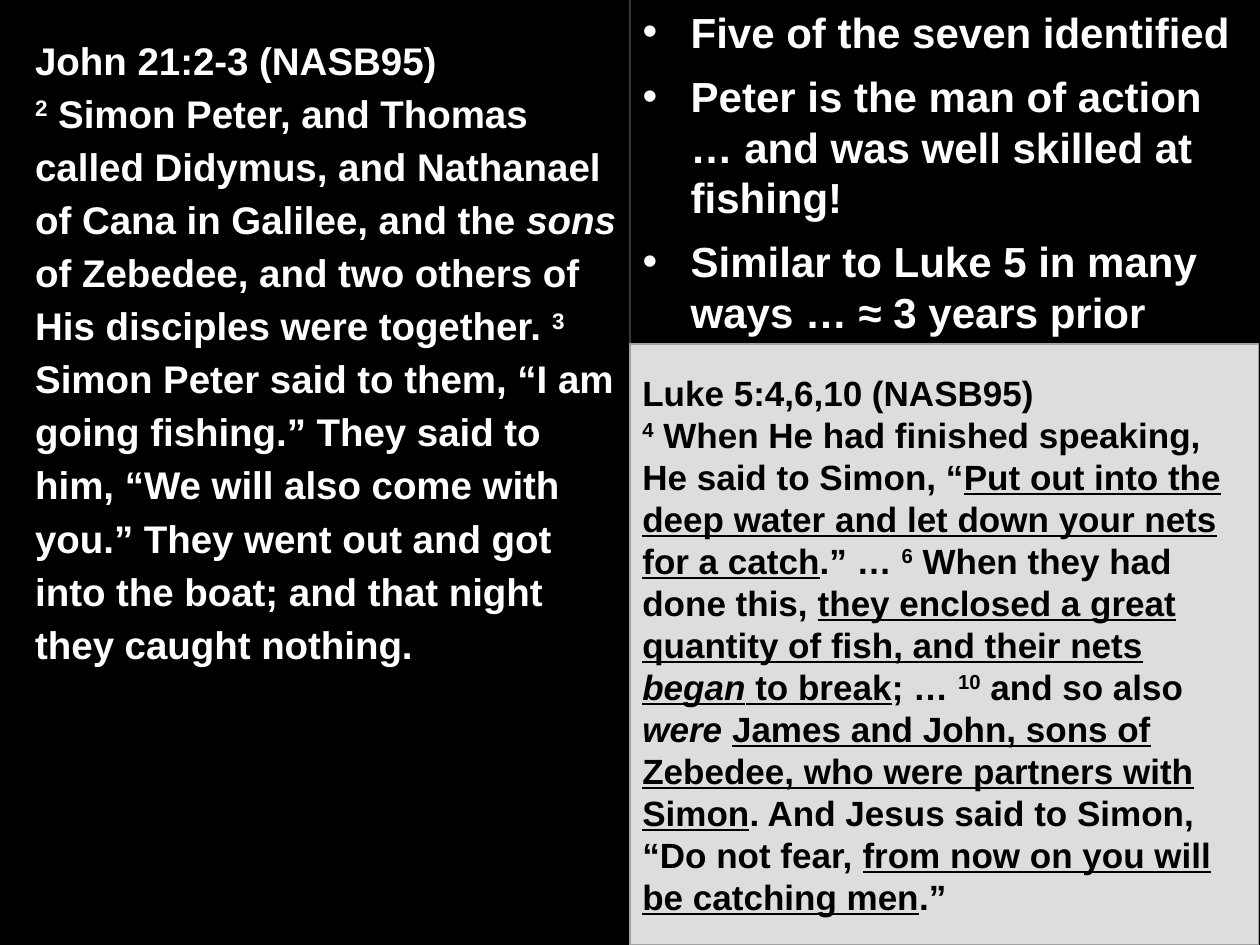
import pptx
import pptx.util
import pptx.dml.color
import pptx.enum.shapes
import pptx.enum.text
import pptx.oxml.ns
from dataclasses import dataclass
from lxml import etree
from pptx.util import Cm, Pt


@dataclass(frozen=True)
class Theme:
    font: str = "Arial"
    dark: str = "000000"
    light: str = "FFFFFF"
    panel: str = "DDDDDD"
    panel_edge: str = "A3A3A3"
    passage_size: int = 22
    bullet_size: int = 24
    reference_size: int = 20


THEME = Theme()
WIDTH, HEIGHT = Cm(25.4), Cm(19.05)
MIDDLE = Cm(12.7)
PANEL_TOP = Cm(6.93)

# Each run is (text, style): s = superscript, i = italic, u = underlined.
JOHN = [
    ("John 21:2-3 (NASB95)\v", ""),
    ("2", "s"),
    (" Simon Peter, and Thomas called Didymus, and Nathanael of Cana in Galilee, and the ", ""),
    ("sons", "i"),
    (" of Zebedee, and two others of His disciples were together. ", ""),
    ("3", "s"),
    (" Simon Peter said to them, “I am going fishing.” They said to him, “We will also come "
     "with you.” They went out and got into the boat; and that night they caught nothing.", ""),
]
POINTS = [
    "Five of the seven identified",
    "Peter is the man of action … and was well skilled at fishing!",
    "Similar to Luke 5 in many ways … ≈ 3 years prior",
]
LUKE_HEADING = [("Luke 5:4,6,10 (NASB95)", "")]
LUKE = [
    ("4", "s"),
    (" When He had finished speaking, He said to Simon, “", ""),
    ("Put out into the deep water and let down your nets for a catch", "u"),
    (".” … ", ""),
    ("6", "s"),
    (" When they had done this, ", ""),
    ("they enclosed a great quantity of fish, and their nets ", "u"),
    ("began", "iu"),
    (" to break", "u"),
    ("; … ", ""),
    ("10", "s"),
    (" and so also ", ""),
    ("were ", "i"),
    ("James and John, sons of Zebedee, who were partners with Simon", "u"),
    (". And Jesus said to Simon, “Do not fear, ", ""),
    ("from now on you will be catching men", "u"),
    (".”", ""),
]


def rgb(color):
    return pptx.dml.color.RGBColor.from_string(color)


def sub(parent, tag, **attrs):
    return etree.SubElement(parent, pptx.oxml.ns.qn(tag), **attrs)


def set_alpha(fill, percent):
    """Make every RGB colour below a fill or line element translucent."""
    for color in fill.iter(pptx.oxml.ns.qn("a:srgbClr")):
        sub(color, "a:alpha", val=str(percent * 1000))


def add_text(p, text, size, color, style=""):
    head, *rest = text.split("\v")
    r = p.add_run()
    r.text = head
    font = r.font
    font.name, font.size, font.bold = THEME.font, Pt(size), True
    font.color.rgb = rgb(color)
    if "i" in style:
        font.italic = True
    if "u" in style:
        font.underline = True
    if "s" in style:
        font._element.set("baseline", "30000")
    for part in rest:
        p.add_line_break()
        if part:
            add_text(p, part, size, color, style)


def add_runs(p, runs, size, color):
    for text, style in runs:
        add_text(p, text, size, color, style)


def add_rect(s, box, fill, line=None):
    sp = s.shapes.add_shape(pptx.enum.shapes.MSO_SHAPE.RECTANGLE, *box)
    sp.shadow.inherit = False
    sp.fill.solid()
    sp.fill.fore_color.rgb = rgb(fill)
    if line:
        sp.line.color.rgb = rgb(line)
        sp.line.width = Pt(1)
    else:
        sp.line.fill.background()
    return sp


def add_divider(s):
    line = s.shapes.add_connector(pptx.enum.shapes.MSO_CONNECTOR.STRAIGHT,
                                  MIDDLE, 0, MIDDLE, HEIGHT)
    line.line.color.rgb = rgb(THEME.light)
    line.line.width = Pt(0.75)
    sp_pr = line._element.spPr
    set_alpha(sp_pr, 35)
    sub(sp_pr, "a:effectLst")


def add_passage(s):
    tf = s.shapes.add_textbox(Cm(0.46), Cm(0.48), Cm(12.24), Cm(13.23)).text_frame
    tf.word_wrap = True
    p = tf.paragraphs[0]
    p.line_spacing = 1.15
    p.space_after = Pt(10)
    add_runs(p, JOHN, THEME.passage_size, THEME.light)


def fill_points(s, body):
    body.left, body.top, body.width, body.height = MIDDLE, 0, MIDDLE, PANEL_TOP
    # Bring the list in front of the backdrop.
    s.shapes._spTree.append(body._element)
    tf = body.text_frame
    tf.word_wrap = True
    tf.auto_size = pptx.enum.text.MSO_AUTO_SIZE.NONE
    for i, text in enumerate(POINTS):
        p = tf.add_paragraph() if i else tf.paragraphs[0]
        p_pr = p._element.get_or_add_pPr()
        p_pr.set("marL", str(Cm(0.97)))
        p_pr.set("indent", str(-Cm(0.97)))
        sub(p_pr, "a:buFont", typeface=THEME.font)
        sub(p_pr, "a:buChar", char="•")
        p.space_before = Pt(8 if i else 0)
        add_text(p, text, THEME.bullet_size, THEME.light)


def add_reference_panel(s):
    box = MIDDLE, PANEL_TOP, Cm(12.67), HEIGHT - PANEL_TOP
    tf = add_rect(s, box, THEME.panel, THEME.panel_edge).text_frame
    tf.word_wrap = True
    tf.vertical_anchor = pptx.enum.text.MSO_ANCHOR.MIDDLE
    for p, runs in ((tf.paragraphs[0], LUKE_HEADING), (tf.add_paragraph(), LUKE)):
        p.alignment = pptx.enum.text.PP_ALIGN.LEFT
        add_runs(p, runs, THEME.reference_size, THEME.dark)


def main():
    prs = pptx.Presentation()
    prs.slide_width, prs.slide_height = WIDTH, HEIGHT
    s = prs.slides.add_slide(prs.slide_layouts[1])
    s.background.fill.solid()
    s.background.fill.fore_color.rgb = rgb(THEME.dark)
    title = s.shapes.title._element
    title.getparent().remove(title)

    backdrop = add_rect(s, (0, 0, WIDTH, HEIGHT), THEME.dark)
    set_alpha(backdrop._element.spPr, 80)
    add_divider(s)
    add_passage(s)
    fill_points(s, s.placeholders[1])
    add_reference_panel(s)
    prs.save("out.pptx")


if __name__ == "__main__":
    main()
